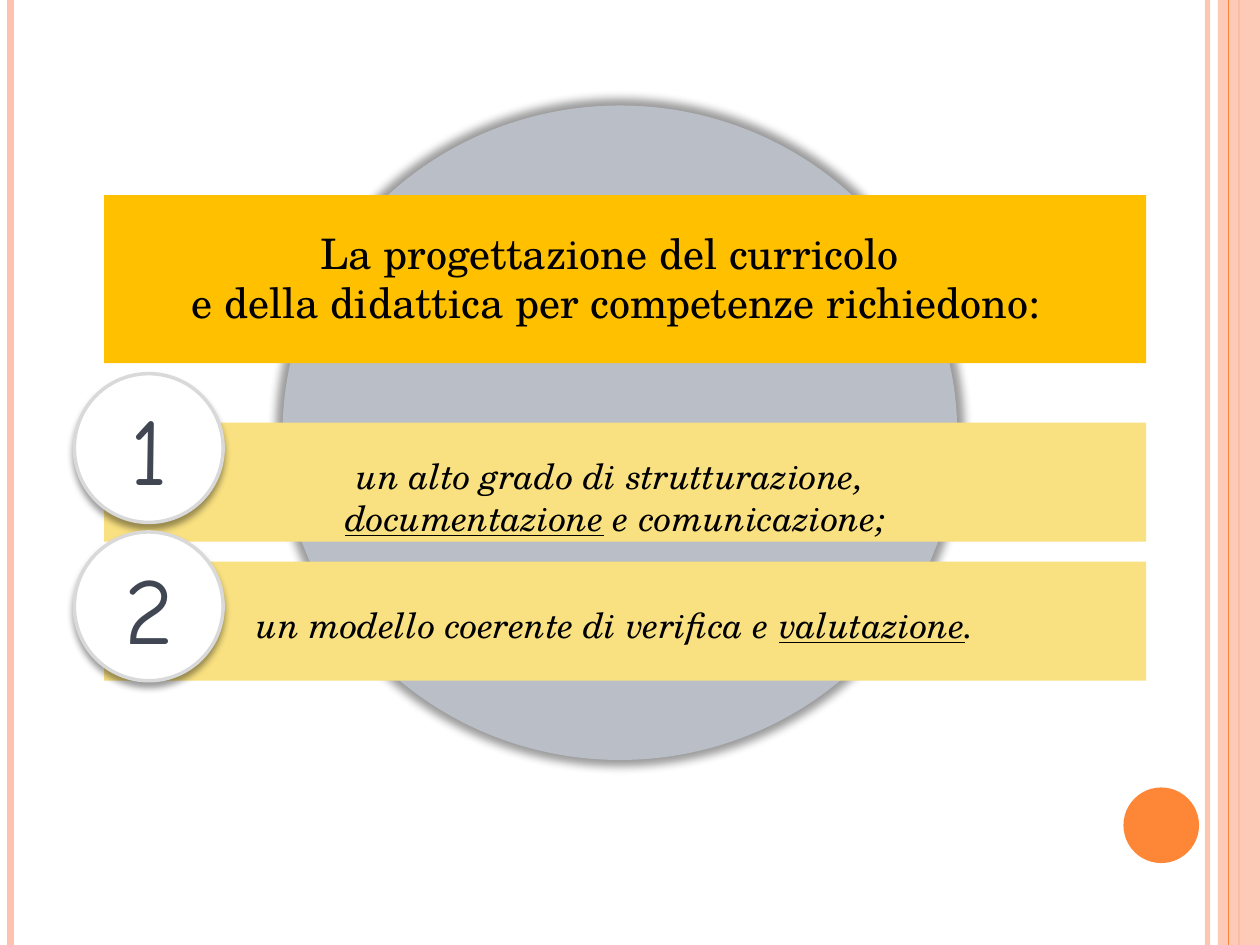
from typing import NamedTuple, Optional

from lxml.etree import SubElement
from pptx import Presentation
from pptx.dml.color import RGBColor
from pptx.enum.shapes import MSO_CONNECTOR, MSO_SHAPE
from pptx.enum.text import MSO_ANCHOR, MSO_AUTO_SIZE, PP_ALIGN
from pptx.oxml.ns import qn
from pptx.util import Pt

WHITE = RGBColor(0xFF, 0xFF, 0xFF)
BLACK = RGBColor(0x00, 0x00, 0x00)
PINK = RGBColor(0xFE, 0xC3, 0xAE)
ORANGE = RGBColor(0xFE, 0x86, 0x37)
GREY = RGBColor(0xB9, 0xBE, 0xC7)
AMBER = RGBColor(0xFF, 0xC0, 0x00)
YELLOW = RGBColor(0xF9, 0xE1, 0x81)
RIM = RGBColor(0xD9, 0xD9, 0xD9)
SLATE = RGBColor(0x41, 0x47, 0x52)

TEXT_FONT = "TeX Gyre Schola"
NUMBER_FONT = "Comic Neue"
WIDTH, HEIGHT = 720, 540
BAND_LEFT, BAND_WIDTH, ITEM_HEIGHT = 59.5, 595.5, 68
TEXT_LEFT, TEXT_WIDTH = 65.5, 572.5
BADGE_LEFT, BADGE_SIZE = 42.5, 85


class Box(NamedTuple):
    left: float
    top: float
    width: float
    height: float


class Rule(NamedTuple):
    x: float
    color: RGBColor
    weight: float
    opacity: int = 100


class Shadow(NamedTuple):
    blur: float
    distance: float = 0
    scale: int = 100


class Run(NamedTuple):
    text: str
    underline: bool = False


class Line(NamedTuple):
    runs: list[Run]
    space_before: float = 5


class Item(NamedTuple):
    number: str
    band_top: float
    badge_top: float


RULES = [
    Rule(690, PINK, 3, 93),
    Rule(6, PINK, 4.5),
    Rule(708, ORANGE, 1.5),
    Rule(702, ORANGE, 0.75),
]
ITEMS = [Item("1", 241.5, 213.5), Item("2", 321, 304)]
HEADING = [
    Line([Run("La progettazione del curricolo ")]),
    Line([Run("e della didattica per competenze richiedono:")]),
]
REQUIREMENTS = [
    Line([Run("un alto grado di strutturazione, ")]),
    Line([Run("documentazione", True), Run(" e comunicazione;")]),
    Line([Run("un modello coerente di verifica e "), Run("valutazione", True), Run(".")], 42),
]


def set_opacity(element, percent: int) -> None:
    """Apply opacity to the first solid colour inside element."""
    if percent < 100:
        color = next(element.iter(qn("a:srgbClr")))
        SubElement(color, qn("a:alpha"), val=str(percent * 1000))


def add_shadow(sp, shadow: Shadow) -> None:
    effects = sp.element.spPr.find(qn("a:effectLst"))
    scale = str(shadow.scale * 1000)
    outer = SubElement(
        effects, qn("a:outerShdw"), blurRad=str(Pt(shadow.blur)),
        dist=str(Pt(shadow.distance)), dir="5400000", sx=scale, sy=scale,
        algn="ctr", rotWithShape="0")
    color = SubElement(outer, qn("a:srgbClr"), val=str(BLACK))
    SubElement(color, qn("a:alpha"), val="40000")


def add_rule(s, rule: Rule) -> None:
    line = s.shapes.add_connector(
        MSO_CONNECTOR.STRAIGHT, Pt(rule.x), Pt(0), Pt(rule.x), Pt(HEIGHT))
    line.line.color.rgb = rule.color
    line.line.width = Pt(rule.weight)
    set_opacity(line.element.spPr, rule.opacity)
    SubElement(line.element.spPr, qn("a:effectLst"))


def add_block(s, kind: MSO_SHAPE, box: Box, fill: RGBColor,
              opacity: int = 100, shadow: Optional[Shadow] = None):
    sp = s.shapes.add_shape(kind, *map(Pt, box))
    sp.fill.solid()
    sp.fill.fore_color.rgb = fill
    set_opacity(sp.element.spPr, opacity)
    sp.line.fill.background()
    sp.shadow.inherit = False
    if shadow:
        add_shadow(sp, shadow)
    return sp


def add_badge(s, item: Item) -> None:
    box = Box(BADGE_LEFT, item.badge_top, BADGE_SIZE, BADGE_SIZE)
    sp = add_block(s, MSO_SHAPE.OVAL, box, WHITE, shadow=Shadow(4, 3))
    sp.line.color.rgb = RIM
    sp.line.width = Pt(2)
    tf = sp.text_frame
    tf.margin_left = tf.margin_right = tf.margin_top = tf.margin_bottom = 0
    tf.vertical_anchor = MSO_ANCHOR.MIDDLE
    p = tf.paragraphs[0]
    p.text = item.number
    p.alignment = PP_ALIGN.CENTER
    p.font.name, p.font.size = NUMBER_FONT, Pt(54)
    p.font.color.rgb = SLATE


def fill_placeholder(ph, box: Box, lines: list[Line], size: float, italic: bool) -> None:
    """Place the text and bring it in front of everything drawn so far."""
    ph.left, ph.top, ph.width, ph.height = map(Pt, box)
    ph.element.getparent().append(ph.element)
    tf = ph.text_frame
    tf.word_wrap = True
    tf.auto_size = MSO_AUTO_SIZE.NONE
    tf.vertical_anchor = MSO_ANCHOR.TOP
    for i, line in enumerate(lines):
        p = tf.add_paragraph() if i else tf.paragraphs[0]
        p.alignment = PP_ALIGN.CENTER
        p.line_spacing = 0.8
        p.space_before = Pt(line.space_before)
        p.font.name, p.font.size, p.font.italic = TEXT_FONT, Pt(size), italic
        p.font.color.rgb = BLACK
        for run in line.runs:
            r = p.add_run()
            r.text = run.text
            if run.underline:
                r.font.underline = True
        pPr = p._p.get_or_add_pPr()
        pPr.set("marL", "0")
        pPr.set("indent", "0")
        pPr.insert_element_before(pPr.makeelement(qn("a:buNone")), "a:tabLst", "a:defRPr")


def main() -> None:
    prs = Presentation()
    prs.slide_width, prs.slide_height = Pt(WIDTH), Pt(HEIGHT)
    s = prs.slides.add_slide(prs.slide_layouts[1])
    title, body = s.placeholders

    for rule in RULES[:3]:
        add_rule(s, rule)
    add_block(s, MSO_SHAPE.RECTANGLE, Box(696, 0, 24, HEIGHT), PINK, opacity=87)
    add_rule(s, RULES[3])
    add_block(s, MSO_SHAPE.OVAL, Box(642, 450, 43.2, 43.2), ORANGE)

    add_block(s, MSO_SHAPE.OVAL, Box(161.5, 60.3, 385.5, 374), GREY,
              shadow=Shadow(5, scale=102))
    add_block(s, MSO_SHAPE.RECTANGLE, Box(BAND_LEFT, 111.5, BAND_WIDTH, 96), AMBER)
    for item in ITEMS:
        band = Box(BAND_LEFT, item.band_top, BAND_WIDTH, ITEM_HEIGHT)
        add_block(s, MSO_SHAPE.RECTANGLE, band, YELLOW)

    fill_placeholder(title, Box(TEXT_LEFT, 131.8, TEXT_WIDTH, 74), HEADING, 24, False)
    fill_placeholder(body, Box(TEXT_LEFT, 260.7, TEXT_WIDTH, 120), REQUIREMENTS, 20, True)
    for item in ITEMS:
        add_badge(s, item)

    prs.save("out.pptx")


if __name__ == "__main__":
    main()
